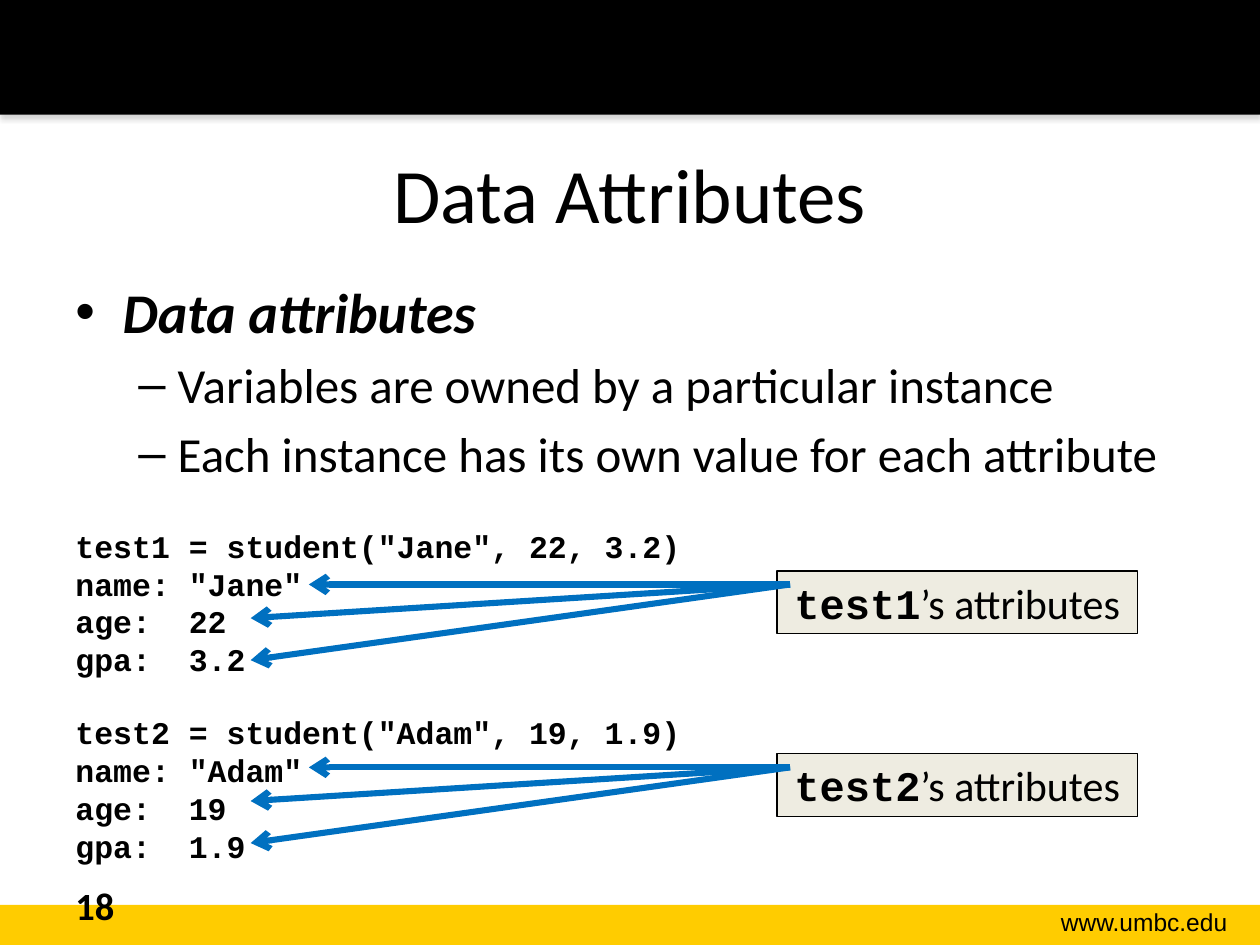
from pptx import Presentation
from pptx.dml.color import RGBColor
from pptx.enum.shapes import MSO_CONNECTOR as Conn, MSO_SHAPE as Form
from pptx.enum.text import MSO_ANCHOR as Anchor, MSO_AUTO_SIZE as Auto, PP_ALIGN as Align
from pptx.oxml import parse_xml
from pptx.oxml.ns import nsdecls
from pptx.util import Pt

BLACK, GOLD, CREAM, BLUE = "000000", "FFCC00", "EEECE1", "0070C0"
SANS, MONO = "Calibri", "Courier New"


def color(code):
    return RGBColor.from_string(code)


class Board:
    """Holds the style and the slide being filled."""

    def __init__(self, deck):
        self.slide = deck.slides.add_slide(deck.slide_layouts[6])
        self.shapes = self.slide.shapes

    def bar(self, x, y, w, h, fill, line=None):
        shape = self.shapes.add_shape(Form.RECTANGLE, Pt(x), Pt(y), Pt(w), Pt(h))
        shape.shadow.inherit = False
        shape.fill.solid()
        shape.fill.fore_color.rgb = color(fill)
        if line:
            shape.line.color.rgb = color(line)
            shape.line.width = Pt(0.75)
        else:
            shape.line.fill.background()
        return shape

    def shade(self, shape):
        effects = shape.element.spPr.find(".//{*}effectLst")
        effects.append(parse_xml(
            f'<a:outerShdw {nsdecls("a")} blurRad="{Pt(3.1)}" dist="{Pt(1.8)}" '
            'dir="5400000" rotWithShape="0"><a:srgbClr val="808080">'
            '<a:alpha val="35000"/></a:srgbClr></a:outerShdw>'))

    def box(self, x, y, w, h, anchor=Anchor.TOP, grow=False):
        frame = self.shapes.add_textbox(Pt(x), Pt(y), Pt(w), Pt(h)).text_frame
        frame.word_wrap = True
        frame.vertical_anchor = anchor
        if grow:
            frame.auto_size = Auto.SHAPE_TO_FIT_TEXT
        return frame

    def run(self, para, text, size, face=SANS, bold=False, slant=False):
        run = para.add_run()
        run.text = text
        font = run.font
        font.size, font.name = Pt(size), face
        font.bold, font.italic = bold, slant
        font.color.rgb = color(BLACK)

    def point(self, para, mark, left, hang, gap=0):
        """Give a paragraph its bullet, indent and space before."""
        props = para._p.get_or_add_pPr()
        props.set("marL", str(Pt(left)))
        props.set("indent", str(Pt(-hang)))
        props.append(parse_xml(f'<a:buFont {nsdecls("a")} typeface="Arial"/>'))
        props.append(parse_xml(f'<a:buChar {nsdecls("a")} char="{mark}"/>'))
        para.space_before = Pt(gap)

    def code(self, x, y, w, h, lines):
        frame = self.box(x, y, w, h, grow=True)
        para = frame.paragraphs[0]
        for i, line in enumerate(lines):
            if i == 1:
                para.add_line_break()
            elif i > 1:
                para = frame.add_paragraph()
            self.run(para, line, 18, MONO, bold=True)

    def label(self, x, y, w, h, name, rest):
        frame = self.bar(x, y, w, h, CREAM, BLACK).text_frame
        frame.word_wrap = True
        frame.vertical_anchor = Anchor.TOP
        frame.auto_size = Auto.SHAPE_TO_FIT_TEXT
        para = frame.paragraphs[0]
        para.alignment = Align.CENTER
        self.run(para, name, 24, MONO, bold=True)
        self.run(para, rest, 24)

    def arrow(self, x1, y1, x2, y2):
        link = self.shapes.add_connector(
            Conn.STRAIGHT, Pt(x1), Pt(y1), Pt(x2), Pt(y2))
        link.line.color.rgb = color(BLUE)
        link.line.width = Pt(3.5)
        link.line._get_or_add_ln().append(
            parse_xml(f'<a:tailEnd {nsdecls("a")} type="arrow"/>'))
        link.element.spPr.append(parse_xml(f'<a:effectLst {nsdecls("a")}/>'))


def main():
    deck = Presentation()
    deck.slide_width, deck.slide_height = Pt(720), Pt(540)
    board = Board(deck)

    # Bands and web address
    board.bar(0, 517, 720, 23, GOLD)
    board.shade(board.bar(0, 0, 720, 65.5, BLACK))
    para = board.box(565, 515, 143.5, 24.2, grow=True).paragraphs[0]
    para.alignment = Align.RIGHT
    board.run(para, "www.umbc.edu", 14, "Arial")

    # Title
    para = board.box(36, 65, 648, 90, Anchor.MIDDLE).paragraphs[0]
    para.alignment = Align.CENTER
    board.run(para, "Data Attributes", 44)

    # Bullets
    body = board.box(36, 155, 648, 327.5)
    para = body.paragraphs[0]
    board.point(para, "•", 27, 27)
    board.run(para, "Data attributes", 32, bold=True, slant=True)
    for text in ("Variables are owned by a particular instance",
                 "Each instance has its own value for each attribute"):
        para = body.add_paragraph()
        para.level = 1
        board.point(para, "–", 58.5, 22.5, 5.6)
        board.run(para, text, 28)

    # Slide number
    board.run(board.box(36, 500.5, 168, 28.8).paragraphs[0], "18", 22, bold=True)

    # Instances: code, label and arrows to each value
    people = (("test1", "Jane", 22, 3.2, 297.5, 326.25),
              ("test2", "Adam", 19, 1.9, 404, 430.75))
    for var, name, age, gpa, top, y in people:
        board.code(36, top, 363.6, 94.5, (
            f'{var} = student("{name}", {age}, {gpa})',
            f'name: "{name}"', f"age:  {age}", f"gpa:  {gpa}"))
        board.label(444, y, 206, 36, var, "’s attributes")
        start = y + 7.75
        for x, drop in ((176.5, 0), (143.25, 19.25), (143.25, 43.25)):
            board.arrow(451.5, start, x, start + drop)

    deck.save("out.pptx")


if __name__ == "__main__":
    main()
